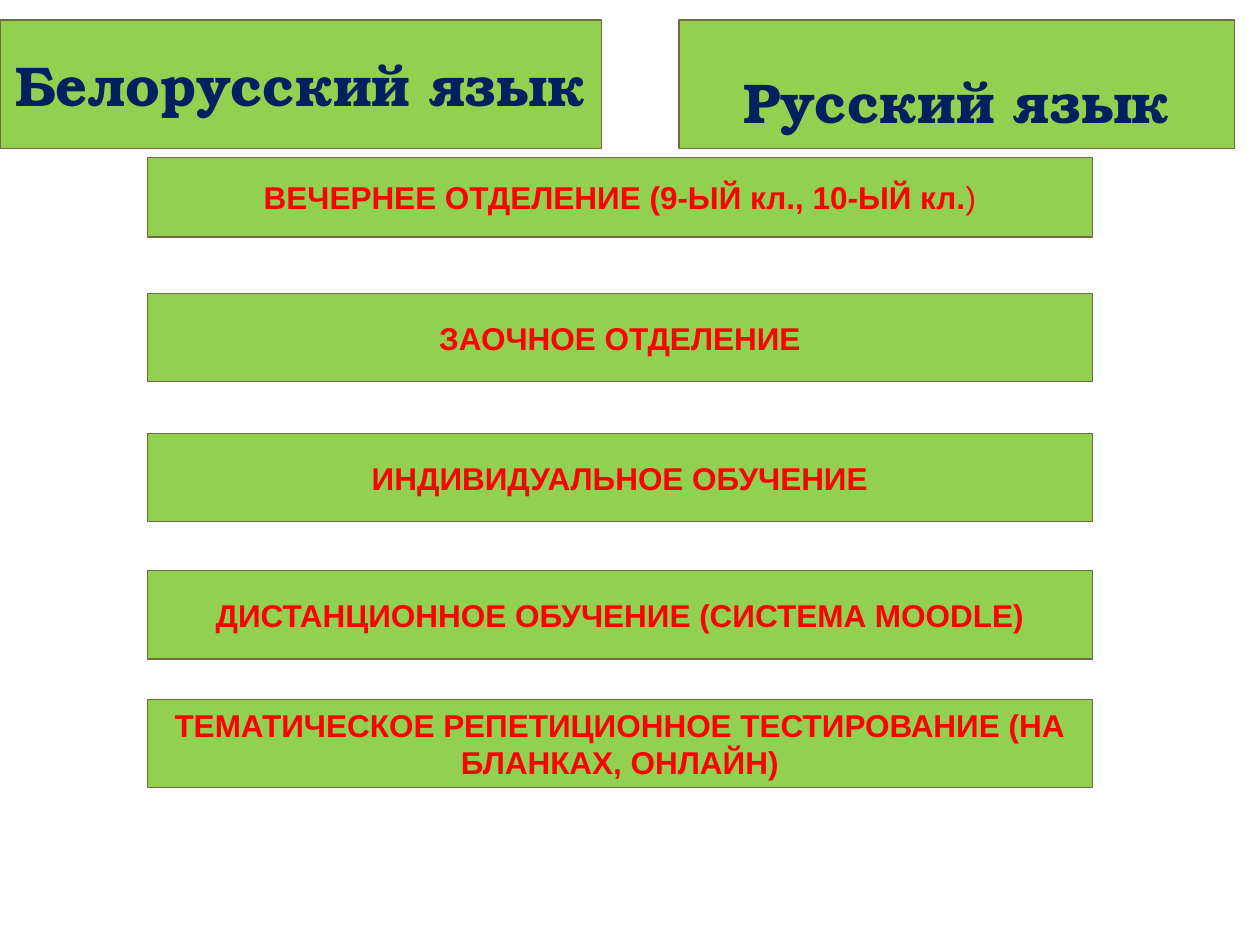
from dataclasses import dataclass

from pptx import Presentation
from pptx.dml.color import RGBColor
from pptx.enum.shapes import MSO_SHAPE
from pptx.enum.text import MSO_ANCHOR, MSO_AUTO_SIZE, PP_ALIGN
from pptx.util import Inches, Pt

SLIDE_WIDTH, SLIDE_HEIGHT = 10, 7.5


@dataclass(frozen=True)
class Theme:
    panel: str = "92D050"
    border: str = "756944"
    border_width: float = 0.85
    heading_color: str = "002060"
    heading_font: str = "TeX Gyre Bonum"
    heading_size: int = 32
    form_color: str = "FF0000"
    form_font: str = "Arial"
    form_size: int = 18


THEME = Theme()

# Boxes are left, top, width, height in inches
HEADINGS_BOX = (0, 0.16, 9.8, 1.02)
FORMS_BOX = (1.17, 1.25, 7.5, 5)

# Text runs, top and height of each form of study, as shares of FORMS_BOX
STUDY_FORMS = [
    ([("ВЕЧЕРНЕЕ ОТДЕЛЕНИЕ (9-ЫЙ кл., 10-ЫЙ кл.", True), (")", False)], 0, 0.126),
    ([("ЗАОЧНОЕ ОТДЕЛЕНИЕ", True)], 0.216, 0.14),
    ([("ИНДИВИДУАЛЬНОЕ ОБУЧЕНИЕ", True)], 0.438, 0.14),
    ([("ДИСТАНЦИОННОЕ ОБУЧЕНИЕ (СИСТЕМА MOODLE)", True)], 0.656, 0.14),
    ([("ТЕМАТИЧЕСКОЕ РЕПЕТИЦИОННОЕ ТЕСТИРОВАНИЕ (НА БЛАНКАХ, ОНЛАЙН)", True)],
     0.86, 0.14),
]


def write_text(panel, runs, *, font, size, color, spacing=1.0, inset=0.1):
    """Fill the panel with one centred paragraph of (text, bold) runs."""
    frame = panel.text_frame
    frame.word_wrap = True
    frame.auto_size = MSO_AUTO_SIZE.NONE
    frame.vertical_anchor = MSO_ANCHOR.MIDDLE
    frame.margin_left = frame.margin_right = Inches(inset)
    paragraph = frame.paragraphs[0]
    paragraph.alignment = PP_ALIGN.CENTER
    paragraph.line_spacing = spacing
    for words, bold in runs:
        run = paragraph.add_run()
        run.text = words
        run.font.name = font
        run.font.size = Pt(size)
        run.font.bold = bold
        run.font.color.rgb = RGBColor.from_string(color)


def paint_panel(panel):
    panel.fill.solid()
    panel.fill.fore_color.rgb = RGBColor.from_string(THEME.panel)
    panel.line.color.rgb = RGBColor.from_string(THEME.border)
    panel.line.width = Pt(THEME.border_width)


def add_panel(slide, box):
    panel = slide.shapes.add_shape(MSO_SHAPE.RECTANGLE, *map(Inches, box))
    panel.shadow.inherit = False
    paint_panel(panel)
    return panel


def place_headings(slide, box):
    """Put the title at the left of the box and the second language at its right."""
    left, top, width, height = box
    title_width, second_width = 0.487 * width, 0.45 * width
    title = slide.shapes.title
    title.left, title.top = Inches(left), Inches(top)
    title.width, title.height = Inches(title_width), Inches(height)
    paint_panel(title)
    second = add_panel(slide, (left + width - second_width, top, second_width, height))
    style = dict(font=THEME.heading_font, size=THEME.heading_size,
                 color=THEME.heading_color, inset=0.05)
    write_text(title, [("Белорусский язык", True)], **style)
    write_text(second, [("Русский язык", True)], spacing=1.5, **style)


def place_study_forms(slide, box):
    left, top, width, height = box
    for runs, top_share, height_share in STUDY_FORMS:
        panel = add_panel(
            slide, (left, top + top_share * height, width, height_share * height))
        write_text(panel, runs, font=THEME.form_font, size=THEME.form_size,
                   color=THEME.form_color)


def main():
    deck = Presentation()
    deck.slide_width, deck.slide_height = Inches(SLIDE_WIDTH), Inches(SLIDE_HEIGHT)
    title_only = deck.slide_layouts[5]
    slide = deck.slides.add_slide(title_only)
    place_headings(slide, HEADINGS_BOX)
    place_study_forms(slide, FORMS_BOX)
    deck.save("out.pptx")


if __name__ == "__main__":
    main()
